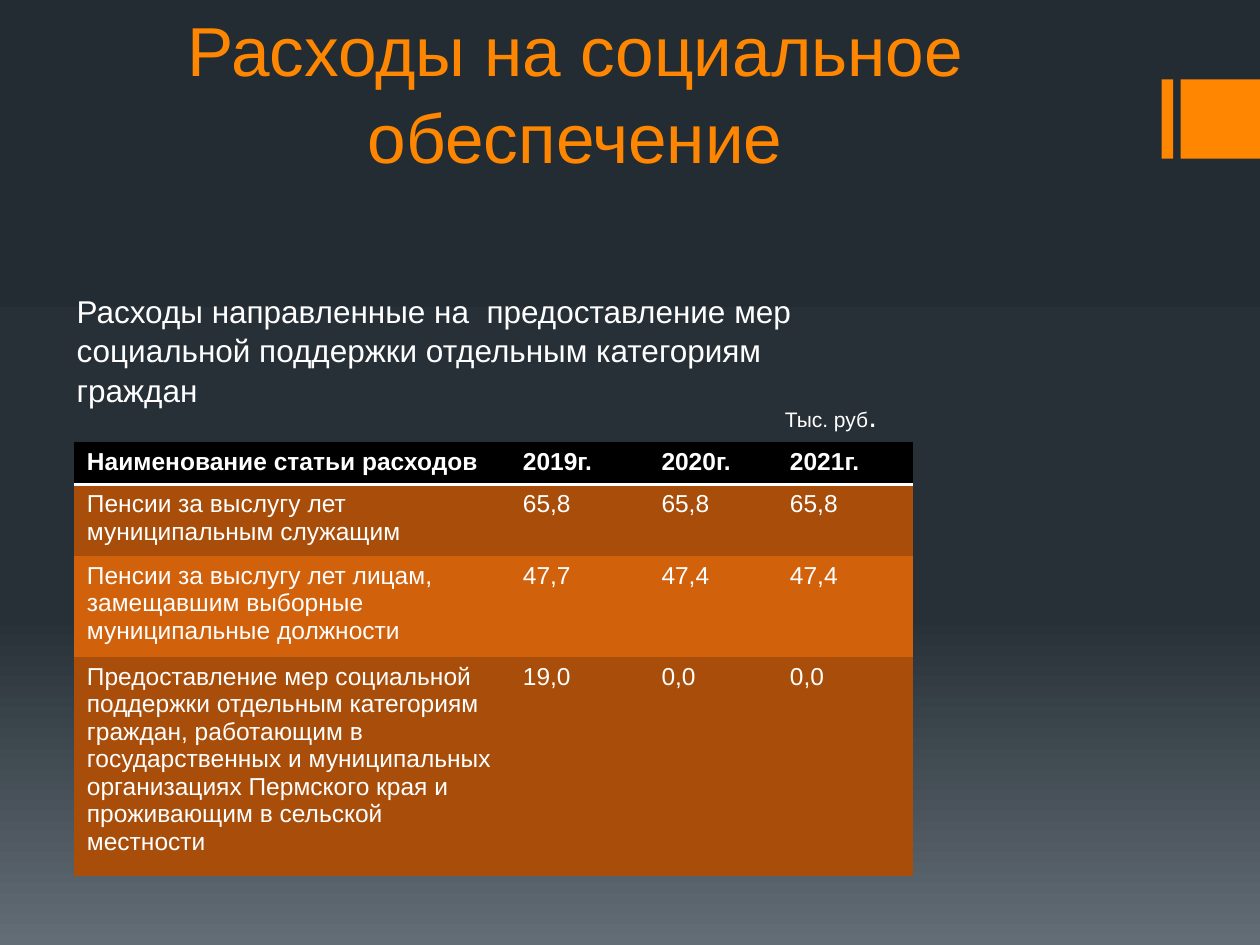
import copy

import pptx
import pptx.dml.color
import pptx.enum.shapes
import pptx.enum.text
import pptx.oxml
import pptx.oxml.ns
import pptx.util

WIDTH, HEIGHT = 10, 7.5
ORANGE, WHITE = "FF8600", "FFFFFF"
inches = pptx.util.Inches


def color(value):
    return pptx.dml.color.RGBColor.from_string(value)


def add_text(box, text, size, value):
    left, top, width, height = box
    shape = slide.shapes.add_textbox(inches(left), inches(top), inches(width), inches(height))
    shape.text_frame.word_wrap = True
    paragraph = shape.text_frame.paragraphs[0]
    paragraph.add_run().text = text
    paragraph.font.name = "Arial"
    paragraph.font.size = pptx.util.Pt(size)
    paragraph.font.color.rgb = color(value)
    return shape, paragraph


presentation = pptx.Presentation()
presentation.slide_width = inches(WIDTH)
presentation.slide_height = inches(HEIGHT)
slide = presentation.slides.add_slide(presentation.slide_layouts[6])

# Background gradient, from top to bottom, with a third stop added
background = slide.background.fill
background.gradient()
background.gradient_angle = 270
stop_list = background._fill._gradFill.gsLst
stop_list.append(copy.deepcopy(stop_list[-1]))
stops = [(0, "242C33"), (0.65, "273037"), (1, "636D76")]
for stop, (position, value) in zip(background.gradient_stops, stops):
    stop.position = position
    stop.color.rgb = color(value)

# Orange marks at the right edge
mark = 0.63
for left, width in [(9.22, 0.09), (WIDTH - mark, mark)]:
    shape = slide.shapes.add_shape(
        pptx.enum.shapes.MSO_SHAPE.RECTANGLE,
        inches(left), inches(mark), inches(width), inches(mark))
    shape.shadow.inherit = False
    shape.fill.solid()
    shape.fill.fore_color.rgb = color(ORANGE)
    shape.line.fill.background()

# Title
title, paragraph = add_text((0.59, 0.21, 7.95, 1.25),
                            "Расходы на социальное обеспечение", 39.6, ORANGE)
title.text_frame.vertical_anchor = pptx.enum.text.MSO_ANCHOR.BOTTOM
paragraph.alignment = pptx.enum.text.PP_ALIGN.CENTER
paragraph.line_spacing = 1.05

# Introduction
introduction, paragraph = add_text(
    (0.51, 2.25, 6.22, 1.01),
    "Расходы направленные на  предоставление мер социальной поддержки "
    "отдельным категориям граждан", 18, WHITE)
paragraph.line_spacing = 1.05

# Table of expenses
rows = [
    ("Наименование статьи расходов", "2019г.", "2020г.", "2021г."),
    ("Пенсии за выслугу лет муниципальным служащим", "65,8", "65,8", "65,8"),
    ("Пенсии за выслугу лет лицам, замещавшим выборные муниципальные должности",
     "47,7", "47,4", "47,4"),
    ("Предоставление мер социальной поддержки отдельным категориям граждан, "
     "работающим в государственных и муниципальных организациях Пермского края "
     "и проживающим в сельской местности", "19,0", "0,0", "0,0"),
]
column_widths = [3.46, 1.1, 1.02, 1.08]
row_heights = [0.33, 0.56, 0.8, 1.74]
row_fills = ["000000", "A84E0A", "D2610C", "A84E0A"]
table = slide.shapes.add_table(
    len(rows), len(column_widths), inches(0.59), inches(3.51),
    inches(sum(column_widths)), inches(sum(row_heights))).table
for column, width in zip(table.columns, column_widths):
    column.width = inches(width)
for row, height in zip(table.rows, row_heights):
    row.height = inches(height)

header_border = (
    f'<a:lnB {pptx.oxml.ns.nsdecls("a")} w="25400"><a:solidFill>'
    f'<a:srgbClr val="{WHITE}"/></a:solidFill></a:lnB>')
no_borders = [
    f'<a:{side} {pptx.oxml.ns.nsdecls("a")} w="0"><a:noFill/></a:{side}>'
    for side in ("lnL", "lnR", "lnT", "lnB")]
for row_index, texts in enumerate(rows):
    is_header = row_index == 0
    for column_index, text in enumerate(texts):
        cell = table.cell(row_index, column_index)
        cell.text = text
        font = cell.text_frame.paragraphs[0].font
        font.name = "Arial"
        font.size = pptx.util.Pt(14)
        font.bold = is_header
        font.color.rgb = color(WHITE)
        cell.fill.solid()
        cell.fill.fore_color.rgb = color(row_fills[row_index])
        borders = list(no_borders)
        if is_header:
            borders[3] = header_border
        elif row_index == 1:
            borders[2] = header_border.replace("lnB", "lnT")
        properties = cell._tc.get_or_add_tcPr()
        for index, border in enumerate(borders):
            properties.insert(index, pptx.oxml.parse_xml(border))

# Unit of measure, with a larger full stop
unit, paragraph = add_text((5.63, 3.09, 1.57, 0.4), "Тыс. руб", 12, WHITE)
unit.text_frame.margin_left = inches(0.6)
full_stop = paragraph.add_run()
full_stop.text = "."
full_stop.font.size = pptx.util.Pt(18)

presentation.save("out.pptx")
